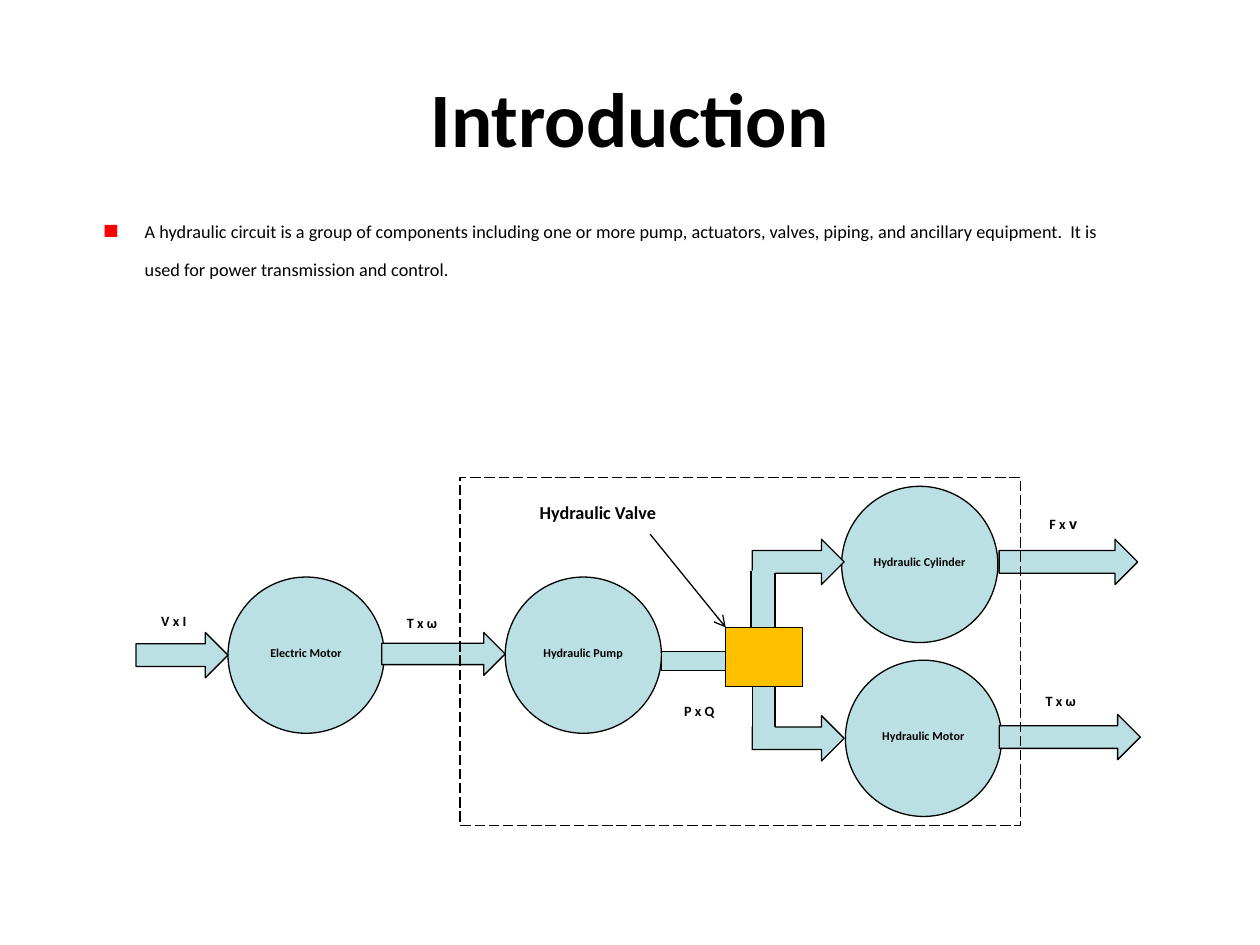
from lxml.etree import SubElement
from pptx import Presentation
from pptx.dml.color import RGBColor
from pptx.enum.dml import MSO_LINE
from pptx.enum.shapes import MSO_CONNECTOR, MSO_SHAPE
from pptx.enum.text import MSO_ANCHOR, PP_ALIGN
from pptx.oxml.ns import qn
from pptx.util import Inches, Pt


def rgb(value):
    return RGBColor.from_string(value)


class Diagram:
    font = "Calibri"
    ink = "000000"
    pale = "BBE0E3"
    amber = "FFC000"
    red = "FF0000"
    stroke = Pt(0.75)

    def __init__(self, slide):
        self.s = slide

    def style(self, tf, size, bold=True, raised=True, align=PP_ALIGN.CENTER):
        for p in tf.paragraphs:
            p.alignment = align
            for r in p.runs:
                r.font.name = self.font
                r.font.size = Pt(size)
                r.font.bold = bold
                r.font.color.rgb = rgb(self.ink)
                if raised:
                    r.font._element.set("baseline", "30000")

    def text(self, box, words, size, anchor=MSO_ANCHOR.TOP, **look):
        sp = self.s.shapes.add_textbox(*map(Inches, box))
        tf = sp.text_frame
        tf.word_wrap = True
        tf.vertical_anchor = anchor
        tf.text = words
        self.style(tf, size, **look)
        return tf

    def label(self, box, words):
        tf = self.text(box, words, 14, MSO_ANCHOR.MIDDLE)
        tf.word_wrap = False
        self.no_margins(tf)
        return tf

    def no_margins(self, tf):
        tf.margin_left = tf.margin_right = tf.margin_top = tf.margin_bottom = 0

    def bullet(self, p, indent):
        pPr = p._p.get_or_add_pPr()
        pPr.set("marL", str(Inches(indent)))
        pPr.set("indent", str(-Inches(indent)))
        color = SubElement(pPr, qn("a:buClr"))
        SubElement(color, qn("a:srgbClr"), val=self.red)
        SubElement(pPr, qn("a:buSzPct"), val="120000")
        SubElement(pPr, qn("a:buChar"), char="▪")

    def shape(self, kind, box, fill=pale, outline=True):
        sp = self.s.shapes.add_shape(kind, *map(Inches, box))
        sp.shadow.inherit = False
        if fill:
            sp.fill.solid()
            sp.fill.fore_color.rgb = rgb(fill)
        else:
            sp.fill.background()
        if outline:
            sp.line.color.rgb = rgb(self.ink)
            sp.line.width = self.stroke
        else:
            sp.line.fill.background()
        return sp

    def component(self, left, top, name):
        sp = self.shape(MSO_SHAPE.OVAL, (left, top, 1.24, 1.24))
        tf = sp.text_frame
        tf.word_wrap = True
        tf.vertical_anchor = MSO_ANCHOR.MIDDLE
        self.no_margins(tf)
        tf.text = name
        self.style(tf, 12)

    def arrow(self, left, top, width, height=0.36):
        self.shape(MSO_SHAPE.RIGHT_ARROW, (left, top, width, height))

    def line(self, start, end, arrowhead=False):
        c = self.s.shapes.add_connector(MSO_CONNECTOR.STRAIGHT,
                                        *map(Inches, start + end))
        c.line.color.rgb = rgb(self.ink)
        c.line.width = self.stroke
        if arrowhead:
            SubElement(c.line._get_or_add_ln(), qn("a:tailEnd"), type="arrow")
        SubElement(c._element.spPr, qn("a:effectLst"))


def main():
    prs = Presentation()
    prs.slide_width, prs.slide_height = Inches(10), Inches(7.5)
    d = Diagram(prs.slides.add_slide(prs.slide_layouts[6]))

    # Title and definition
    d.text((0.5, 0.3, 9, 1.25), "Introduction", 44, MSO_ANCHOR.MIDDLE, raised=False)
    tf = d.text((0.67, 1.67, 8.21, 1.01),
                "A hydraulic circuit is a group of components including one or more "
                "pump, actuators, valves, piping, and ancillary equipment.  It is used "
                "for power transmission and control.",
                18, bold=False, align=PP_ALIGN.LEFT)
    d.bullet(tf.paragraphs[0], 0.38)

    # Components
    for left, top, name in [(6.68, 3.86, "Hydraulic Cylinder"),
                            (1.81, 4.58, "Electric Motor"),
                            (4.01, 4.58, "Hydraulic Pump"),
                            (6.71, 5.24, "Hydraulic Motor")]:
        d.component(left, top, name)

    # Power flow between components
    d.shape(MSO_SHAPE.RECTANGLE, (5.25, 5.17, 0.8, 0.15))
    d.arrow(1.08, 5.02, 0.73)
    d.arrow(3.03, 5.02, 0.98, 0.34)
    d.arrow(7.93, 4.28, 1.1)
    d.arrow(7.93, 5.67, 1.12)

    # Branch pipe to cylinder and motor
    for top in (4.28, 5.68):
        d.arrow(5.97, top, 0.73)
    d.shape(MSO_SHAPE.RECTANGLE, (5.97, 4.53, 0.18, 1.27), outline=False)
    d.line((6.15, 5.77), (6.15, 4.55))
    d.line((5.97, 5.86), (5.97, 5.31))
    d.line((5.96, 5.16), (5.96, 4.53))

    # Power labels
    for box, words in [((2.9, 4.74, 0.9, 0.45), "T x ω"),
                       ((0.86, 4.73, 1.04, 0.44), "V x I"),
                       ((5.1, 5.44, 0.9, 0.45), "P x Q"),
                       ((7.97, 5.36, 0.9, 0.45), "T x ω")]:
        d.label(box, words)
    tf = d.label((7.92, 3.96, 1.04, 0.44), "F x ")
    r = tf.paragraphs[0].add_run()
    r.text = "v"
    d.style(tf, 14)
    r.font.name = "Noto Sans Mono"

    # System boundary and valve
    boundary = d.shape(MSO_SHAPE.RECTANGLE, (3.65, 3.79, 4.45, 2.76), fill=None)
    boundary.line.dash_style = MSO_LINE.LONG_DASH
    d.text((3.7, 3.9, 2.09, 0.4), "Hydraulic Valve", 18)
    d.shape(MSO_SHAPE.RECTANGLE, (5.76, 4.98, 0.61, 0.47), fill=d.amber)
    d.line((5.16, 4.24), (5.76, 4.98), arrowhead=True)

    prs.save("out.pptx")


if __name__ == "__main__":
    main()
